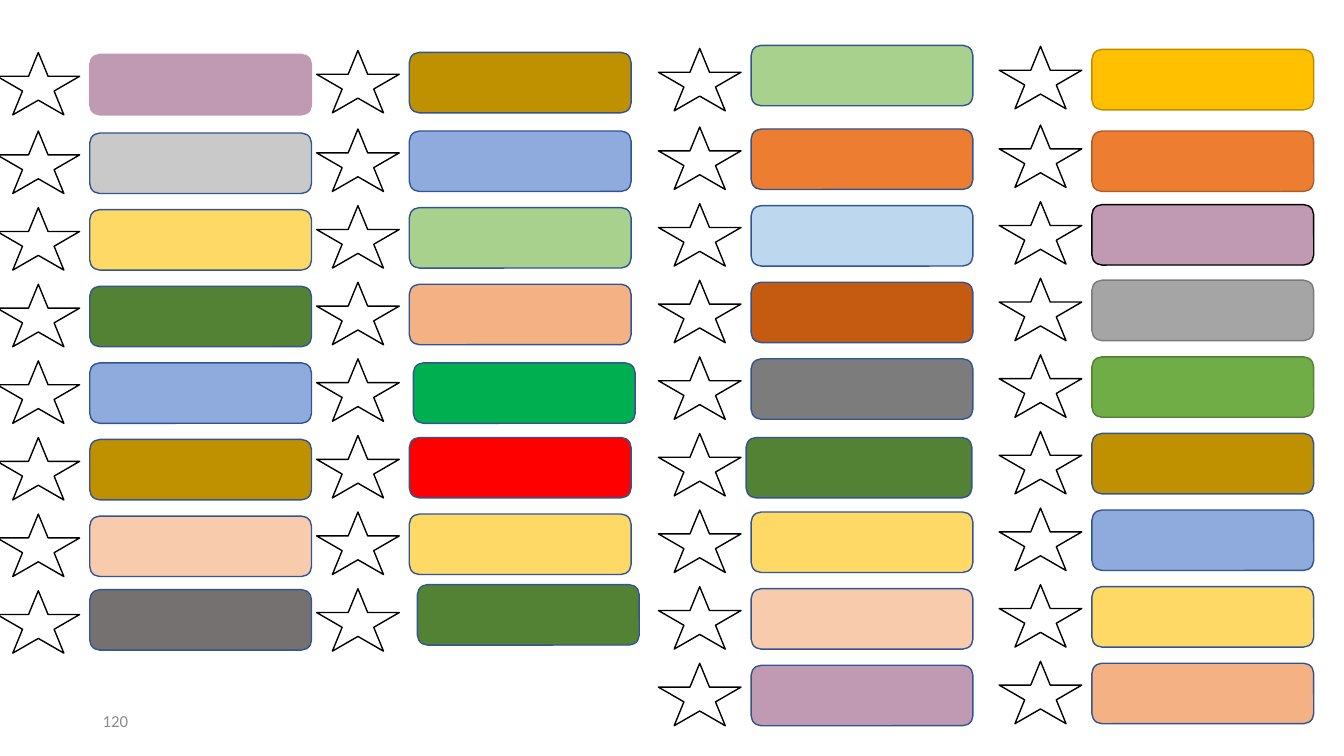
from dataclasses import dataclass

from pptx import Presentation
from pptx.dml.color import RGBColor
from pptx.enum.shapes import MSO_SHAPE as Preset
from pptx.enum.text import MSO_ANCHOR as Anchor, PP_ALIGN as Align
from pptx.util import Emu, Pt

PX = 9144
SLIDE_WIDTH, SLIDE_HEIGHT = 1333, 750
STAR_WIDTH, STAR_HEIGHT = 82, 62
BAR_WIDTH, BAR_HEIGHT = 220, 60
BAR_OFFSET_X, BAR_OFFSET_Y = 92, 2
ROW_PITCH, FIRST_ROW_EXTRA = 76, 2


@dataclass(frozen=True)
class Theme:
    white: str = "FFFFFF"
    black: str = "000000"
    navy: str = "325491"
    mauve: str = "C099B2"
    silver: str = "C9C9C9"
    gray: str = "A5A5A5"
    gray_edge: str = "7A7A7A"
    slate: str = "7C7C7C"
    stone: str = "767171"
    muted: str = "8C8C8C"
    yellow: str = "FFD966"
    amber: str = "FFC000"
    amber_edge: str = "BD8E00"
    gold: str = "BF9000"
    forest: str = "548235"
    green: str = "70AD47"
    green_edge: str = "538035"
    emerald: str = "00B050"
    mint: str = "A9D18E"
    periwinkle: str = "8FAADC"
    sky: str = "BDD7EE"
    peach: str = "F8CBAD"
    apricot: str = "F4B183"
    orange: str = "ED7D31"
    orange_edge: str = "AF5C24"
    rust: str = "C55A11"
    red: str = "FF0000"
    font: str = "Calibri"
    number_size: int = 12
    line_width: int = 1


@dataclass(frozen=True)
class Column:
    left: int
    top: int
    colours: tuple
    edges: dict
    shifts: dict


def set_text(shape, text, *, font, size, colour, align=Align.LEFT, anchor=Anchor.MIDDLE):
    frame = shape.text_frame
    frame.word_wrap = True
    frame.vertical_anchor = anchor
    paragraph = frame.paragraphs[0]
    paragraph.alignment = align
    run = paragraph.add_run()
    run.text = text
    run.font.name = font
    run.font.size = Pt(size)
    run.font.color.rgb = RGBColor.from_string(colour)


class SlideBuilder:
    def __init__(self, slide, theme):
        self.slide = slide
        self.theme = theme

    def preset(self, kind, left, top, width, height, fill, edge):
        box = (Emu(value * PX) for value in (left, top, width, height))
        shape = self.slide.shapes.add_shape(kind, *box)
        shape.shadow.inherit = False
        shape.fill.solid()
        shape.fill.fore_color.rgb = RGBColor.from_string(fill)
        shape.line.color.rgb = RGBColor.from_string(edge)
        shape.line.width = Pt(self.theme.line_width)

    def star(self, left, top):
        self.preset(Preset.STAR_5_POINT, left, top, STAR_WIDTH, STAR_HEIGHT,
                    self.theme.white, self.theme.black)

    def bar(self, left, top, fill, edge, extra_width=0):
        self.preset(Preset.ROUNDED_RECTANGLE, left, top, BAR_WIDTH + extra_width,
                    BAR_HEIGHT, fill, edge)

    def column(self, column):
        for row, colour in enumerate(column.colours):
            top = column.top + ROW_PITCH * row + (FIRST_ROW_EXTRA if row else 0)
            shift_x, shift_y, extra_width = column.shifts.get(row, (0, 0, 0))
            self.bar(column.left + BAR_OFFSET_X + shift_x, top + BAR_OFFSET_Y + shift_y,
                     colour, column.edges.get(row, self.theme.navy), extra_width)
            self.star(column.left, top)

    def slide_number(self, text, left, top, width, height):
        box = (Emu(value * PX) for value in (left, top, width, height))
        shape = self.slide.shapes.add_textbox(*box)
        set_text(shape, text, font=self.theme.font, size=self.theme.number_size,
                 colour=self.theme.muted)


def star_columns(theme):
    return (
        Column(991, 46,
               (theme.amber, theme.orange, theme.mauve, theme.gray, theme.green,
                theme.gold, theme.periwinkle, theme.yellow, theme.apricot),
               {0: theme.amber_edge, 1: theme.orange_edge, 2: theme.black,
                3: theme.gray_edge, 4: theme.green_edge},
               {0: (0, 1, 0), 1: (0, 4, 0), 2: (0, 1, 0)}),
        Column(653, 48,
               (theme.mint, theme.orange, theme.sky, theme.rust, theme.slate,
                theme.forest, theme.yellow, theme.peach, theme.mauve),
               {}, {0: (0, -5, 0), 5: (-5, 2, 4)}),
        Column(314, 50,
               (theme.gold, theme.periwinkle, theme.mint, theme.apricot,
                theme.emerald, theme.red, theme.yellow, theme.forest),
               {}, {4: (4, 2, 0), 7: (8, -6, 0)}),
        Column(-3, 52,
               (theme.mauve, theme.silver, theme.yellow, theme.forest,
                theme.periwinkle, theme.gold, theme.peach, theme.stone),
               {0: theme.mauve}, {7: (0, -3, 0)}),
    )


def main():
    presentation = Presentation()
    presentation.slide_width = Emu(SLIDE_WIDTH * PX)
    presentation.slide_height = Emu(SLIDE_HEIGHT * PX)
    slide = presentation.slides.add_slide(presentation.slide_layouts[6])
    theme = Theme()
    builder = SlideBuilder(slide, theme)
    for column in star_columns(theme):
        builder.column(column)
    builder.slide_number("120", 92, 695, 300, 40)
    presentation.save("out.pptx")


if __name__ == "__main__":
    main()
